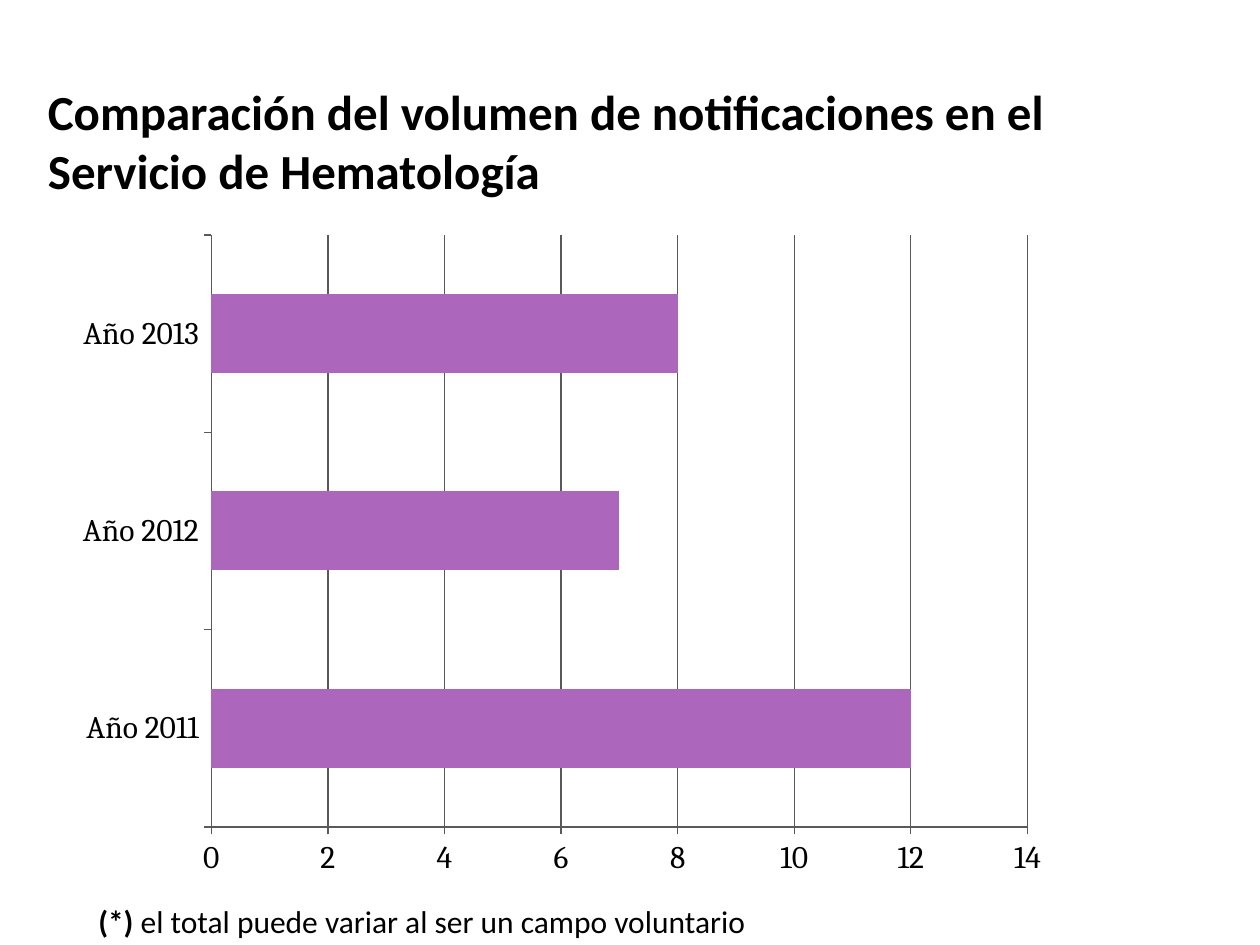
from pptx import Presentation
from pptx.chart.data import CategoryChartData
from pptx.dml.color import RGBColor
from pptx.enum.chart import XL_CHART_TYPE, XL_TICK_MARK
from pptx.enum.text import MSO_ANCHOR, MSO_AUTO_SIZE, PP_ALIGN
from pptx.util import Inches, Pt

BAR_STACKED = XL_CHART_TYPE.BAR_STACKED
OUTSIDE, NO_TICK = XL_TICK_MARK.OUTSIDE, XL_TICK_MARK.NONE
BLACK = RGBColor(0x00, 0x00, 0x00)
PURPLE = RGBColor(0xAC, 0x66, 0xBB)
GREY = RGBColor(0x59, 0x59, 0x59)

# Content
TITLE = "Comparación del volumen de notificaciones en el Servicio de Hematología"
NOTE = [("(*) ", True), ("el total puede variar al ser un campo voluntario", False)]
REPORTS = {"Año 2011": 12, "Año 2012": 7, "Año 2013": 8}

# Positions: left, top, width, height
TITLE_BOX = (0.28, 0.6, 8.19, 1.99)
CHART_BOX = (0.5, 1.76, 7.92, 5.3)
NOTE_BOX = (0.59, 6.98, 6.93, 0.57)


def inches(box):
    return [Inches(v) for v in box]


def format_font(font, name, size, bold=False):
    for key, value in {"name": name, "size": Pt(size), "bold": bold}.items():
        setattr(font, key, value)
    font.color.rgb = BLACK


def format_frame(tf, **values):
    for key, value in values.items():
        setattr(tf, key, value)


prs = Presentation()
prs.slide_width, prs.slide_height = Inches(10), Inches(7.5)
s = prs.slides.add_slide(prs.slide_layouts[5])

# Bar chart
data = CategoryChartData()
data.categories = list(REPORTS)
data.add_series("Series 1", list(REPORTS.values()))
chart = s.shapes.add_chart(BAR_STACKED, *inches(CHART_BOX), data).chart
chart.has_legend = chart.has_title = False
format_font(chart.font, "Cambria", 18)

plot = chart.plots[0]
plot.gap_width, plot.overlap, plot.vary_by_categories = 150, 100, False
fill = plot.series[0].format.fill
fill.solid()
fill.fore_color.rgb = PURPLE

value_axis, category_axis = chart.value_axis, chart.category_axis
value_axis.has_major_gridlines = True
for axis in (value_axis, category_axis):
    axis.major_tick_mark, axis.minor_tick_mark = OUTSIDE, NO_TICK
for part in (value_axis, category_axis, value_axis.major_gridlines):
    part.format.line.color.rgb = GREY
    part.format.line.width = Pt(0.75)

# Title
title = s.shapes.title
title.left, title.top, title.width, title.height = inches(TITLE_BOX)
format_frame(title.text_frame, word_wrap=True, vertical_anchor=MSO_ANCHOR.TOP,
             auto_size=MSO_AUTO_SIZE.NONE)
p = title.text_frame.paragraphs[0]
p.alignment = PP_ALIGN.LEFT
r = p.add_run()
r.text = TITLE
format_font(r.font, "Calibri", 28, True)

# Footnote
tf = s.shapes.add_textbox(*inches(NOTE_BOX)).text_frame
format_frame(tf, word_wrap=True, vertical_anchor=MSO_ANCHOR.TOP,
             margin_left=Inches(0.19), margin_top=Inches(0.18))
for text, bold in NOTE:
    r = tf.paragraphs[0].add_run()
    r.text = text
    format_font(r.font, "Calibri", 18, bold)

prs.save("out.pptx")
